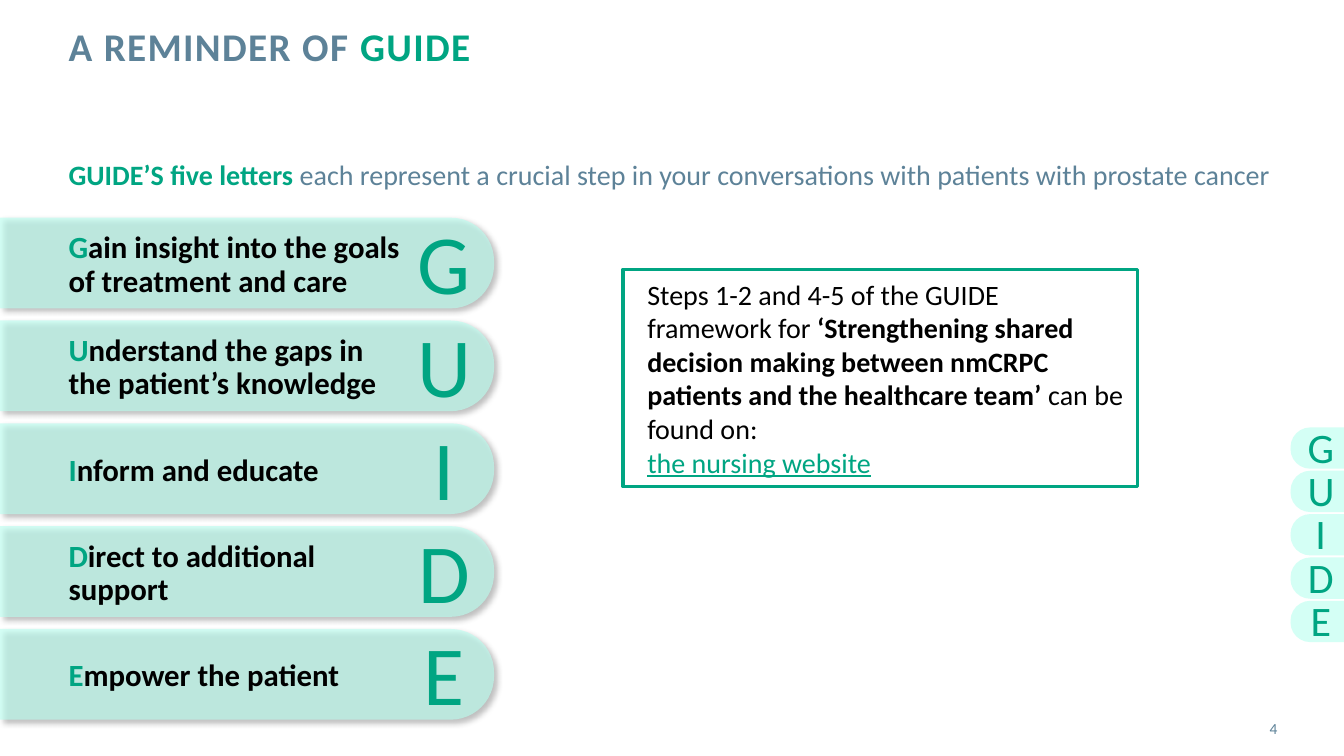
import pptx
import pptx.util
import pptx.dml.color
import pptx.enum.shapes
import pptx.enum.text
import pptx.oxml
import pptx.oxml.ns
from dataclasses import dataclass

Inches = pptx.util.Inches
Pt = pptx.util.Pt
Align = pptx.enum.text.PP_ALIGN
Anchor = pptx.enum.text.MSO_ANCHOR
Shape = pptx.enum.shapes.MSO_SHAPE


@dataclass(frozen=True)
class Theme:
    font: str = "Calibri"
    green: str = "00A582"
    slate: str = "5D8298"
    black: str = "000000"
    white: str = "FFFFFF"
    mint: str = "BAFFF0"
    title: int = 28
    body: int = 20
    label: int = 22
    initial: int = 60
    tab: int = 30
    number: int = 11


theme = Theme()


def write(box, spans, size, margins=(0, 0, 0, 0), anchor=Anchor.TOP, align=Align.LEFT, wrap=True):
    """Fill a box with (text, colour, bold) spans; a newline is a line break."""
    frame = box.text_frame
    frame.word_wrap = wrap
    frame.vertical_anchor = anchor
    frame.margin_left, frame.margin_top, frame.margin_right, frame.margin_bottom = map(Inches, margins)
    para = frame.paragraphs[0]
    para.alignment = align
    for text, colour, bold in spans:
        for index, line in enumerate(text.split("\n")):
            if index:
                para.add_line_break()
            span = para.add_run()
            span.text = line
            span.font.name = theme.font
            span.font.size = Pt(size)
            span.font.bold = bold
            span.font.color.rgb = pptx.dml.color.RGBColor.from_string(colour)
    return para


def add_pill(left, top, width, height, rotation):
    """Add a bar rounded at one end; left, top, width and height are as seen."""
    pill = page.shapes.add_shape(
        Shape.ROUND_2_SAME_RECTANGLE,
        Inches(left + (width - height) / 2), Inches(top + (height - width) / 2),
        Inches(height), Inches(width))
    pill.rotation = rotation
    pill.adjustments[0] = 0.477
    pill.adjustments[1] = 0
    pill.shadow.inherit = False
    pill.line.fill.background()
    pill.fill.solid()
    pill.fill.fore_color.rgb = pptx.dml.color.RGBColor.from_string(theme.mint)
    colour = pill.fill._xPr.find(".//" + pptx.oxml.ns.qn("a:srgbClr"))
    colour.append(pptx.oxml.parse_xml(f'<a:alpha {pptx.oxml.ns.nsdecls("a")} val="62000"/>'))
    return pill


deck = pptx.Presentation()
deck.slide_width = Inches(13.33)
deck.slide_height = Inches(7.5)
page = deck.slides.add_slide(deck.slide_layouts[6])

# Title
title = page.shapes.add_textbox(Inches(0.68), Inches(0.27), Inches(9.56), Inches(0.88))
para = write(title, [("A REMINDER OF ", theme.slate, True), ("GUIDE", theme.green, True)], theme.title)
para.line_spacing = Pt(30)
for span in para.runs:
    span.font._element.set("spc", "100")

# Introduction
intro = page.shapes.add_textbox(Inches(0.68), Inches(1.56), Inches(12.43), Inches(0.4))
write(intro, [
    ("GUIDE’S five letters ", theme.green, True),
    ("each represent a crucial step in your conversations with patients with prostate cancer",
     theme.slate, False),
], theme.body)

# Page number
number = page.shapes.add_textbox(Inches(11.81), Inches(7.03), Inches(0.86), Inches(0.4))
write(number, [("4", theme.slate, False)], theme.number, anchor=Anchor.MIDDLE, align=Align.RIGHT)

# Framed note
note = page.shapes.add_shape(Shape.RECTANGLE, Inches(6.18), Inches(2.67), Inches(5.1), Inches(2.16))
note.shadow.inherit = False
note.fill.solid()
note.fill.fore_color.rgb = pptx.dml.color.RGBColor.from_string(theme.white)
note.line.color.rgb = pptx.dml.color.RGBColor.from_string(theme.green)
note.line.width = Pt(2.25)
para = write(note, [
    ("Steps 1-2 and 4-5 of the GUIDE framework for ", theme.black, False),
    ("‘Strengthening shared decision making between nmCRPC patients and the healthcare team’ ",
     theme.black, True),
    ("can be found on: \n", theme.black, False),
    ("the nursing website", theme.green, False),
], theme.body, margins=(0.24, 0.05, 0.1, 0.05), anchor=Anchor.MIDDLE)
para.runs[-1].font.underline = True

# Five steps: a banner on the left and a small tab on the right edge
steps = [
    "Gain insight into the goals\nof treatment and care",
    "Understand the gaps in \nthe patient’s knowledge",
    "Inform and educate",
    "Direct to additional \nsupport",
    "Empower the patient",
]
for row, step in enumerate(steps):
    letter = [(step[0], theme.green, False)]

    # Banner with its shadow
    top = 2.16 + row * 1.02
    banner = add_pill(0, top, 4.9, 0.9, 90)
    effects = banner._element.spPr.find(pptx.oxml.ns.qn("a:effectLst"))
    effects.append(pptx.oxml.parse_xml(
        f'<a:outerShdw {pptx.oxml.ns.nsdecls("a")} blurRad="50800" dist="38100" dir="2700000"'
        ' algn="tl" rotWithShape="0"><a:srgbClr val="000000"><a:alpha val="40000"/></a:srgbClr>'
        '</a:outerShdw>'))

    # Banner letter and wording
    initial = page.shapes.add_textbox(Inches(4.04), Inches(top - 0.12), Inches(0.73), Inches(1.11))
    write(initial, letter, theme.initial, margins=(0.1, 0.05, 0.1, 0.05), align=Align.CENTER, wrap=False)
    label = page.shapes.add_textbox(Inches(0.68), Inches(top + 0.09), Inches(3.52), Inches(0.77))
    para = write(label, [(step[0], theme.green, True), (step[1:], theme.black, True)], theme.label,
                 margins=(0, 0.05, 0.1, 0.05), anchor=Anchor.MIDDLE)
    para.line_spacing = 0.9

    # Edge tab
    tab_top = 4.24 + row * 0.43
    add_pill(12.8, tab_top, 0.54, 0.41, 270)
    tab_letter = page.shapes.add_textbox(Inches(12.97), Inches(tab_top - 0.06), Inches(0.26), Inches(0.5))
    write(tab_letter, letter, theme.tab, align=Align.CENTER, wrap=False)

deck.save("out.pptx")
